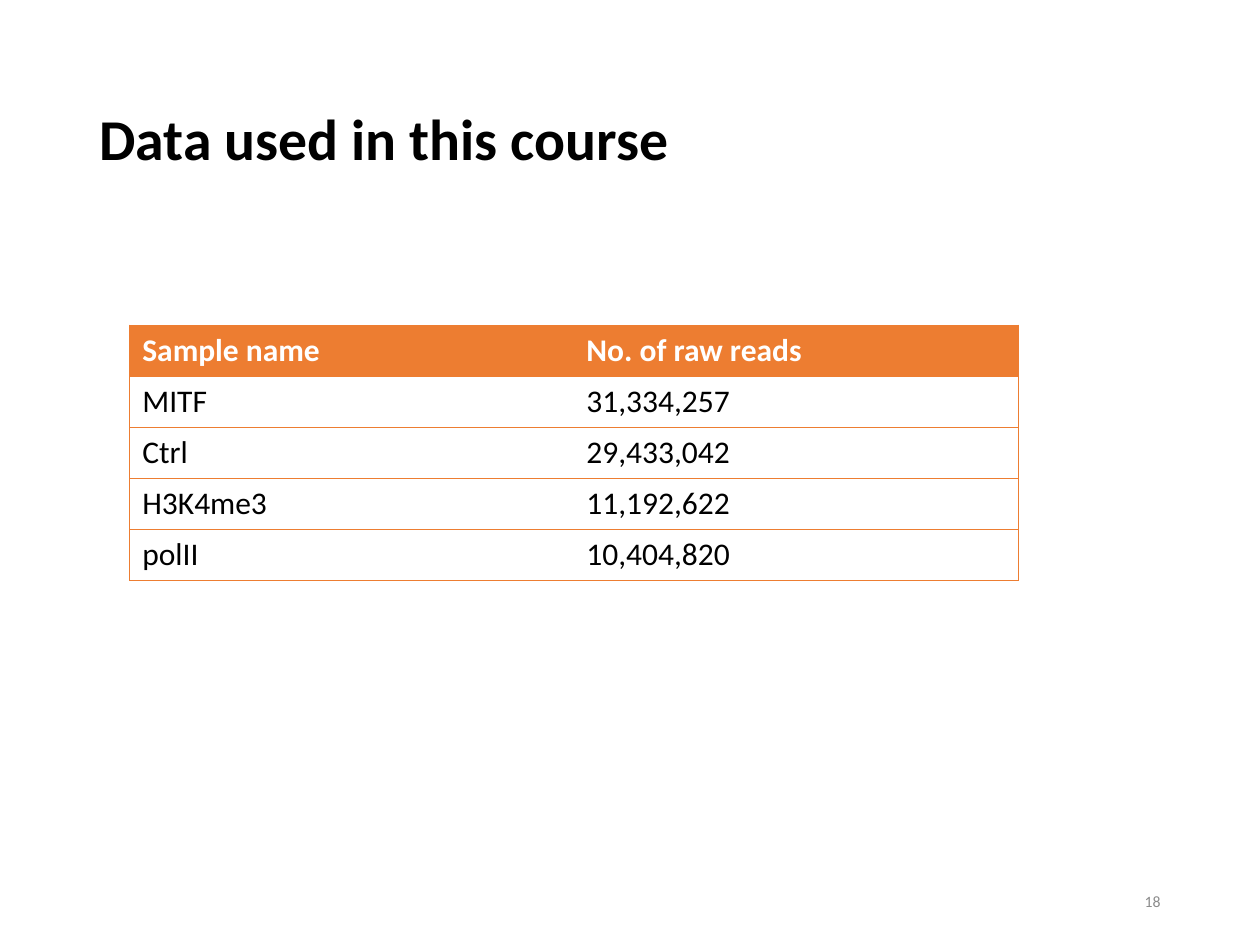
from dataclasses import dataclass

from lxml import etree
from pptx import Presentation
from pptx.dml.color import RGBColor
from pptx.enum.text import MSO_ANCHOR, PP_ALIGN
from pptx.oxml.ns import qn
from pptx.util import Inches, Pt

MIDDLE = MSO_ANCHOR.MIDDLE
LEFT, RIGHT = PP_ALIGN.LEFT, PP_ALIGN.RIGHT


@dataclass(frozen=True)
class Theme:
    font: str = "Calibri"
    ink: str = "000000"
    paper: str = "FFFFFF"
    accent: str = "ED7D31"
    muted: str = "8C8C8C"
    title_size: int = 33
    table_size: int = 18
    number_size: int = 9
    border: float = 0.5


class SlideBuilder:
    """Draws styled elements on the current slide."""

    def __init__(self, page, theme):
        self.page = page
        self.theme = theme

    def style(self, para, size, color, bold=False):
        font = para.font
        font.name, font.size, font.bold = self.theme.font, Pt(size), bold
        font.color.rgb = RGBColor.from_string(color)

    def text(self, words, bounds, size, color, bold=False, align=LEFT, spacing=1.0):
        box = self.page.shapes.add_textbox(*map(Inches, bounds))
        frame = box.text_frame
        frame.word_wrap = True
        frame.vertical_anchor = MIDDLE
        para = frame.paragraphs[0]
        para.text = words
        para.alignment = align
        para.line_spacing = spacing
        self.style(para, size, color, bold)

    def borders(self, cell, visible):
        properties = cell._tc.get_or_add_tcPr()
        for position, side in enumerate("LRTB"):
            line = etree.Element(qn(f"a:ln{side}"), w=str(Pt(self.theme.border)))
            if side in visible:
                fill = etree.SubElement(line, qn("a:solidFill"))
                etree.SubElement(fill, qn("a:srgbClr"), val=self.theme.accent)
            else:
                etree.SubElement(line, qn("a:noFill"))
            properties.insert(position, line)

    def table(self, rows, bounds):
        theme = self.theme
        last = len(rows[0]) - 1
        table = self.page.shapes.add_table(len(rows), last + 1, *map(Inches, bounds)).table
        table.horz_banding = False
        for row, values in enumerate(rows):
            header = row == 0
            for column, value in enumerate(values):
                cell = table.cell(row, column)
                cell.text = value
                cell.fill.solid()
                cell.fill.fore_color.rgb = RGBColor.from_string(theme.accent if header else theme.paper)
                self.style(cell.text_frame.paragraphs[0], theme.table_size,
                           theme.paper if header else theme.ink, header)
                self.borders(cell, "TB" + "L" * (column == 0) + "R" * (column == last))


def main():
    theme = Theme()
    deck = Presentation()
    deck.slide_width, deck.slide_height = Inches(10), Inches(7.5)
    builder = SlideBuilder(deck.slides.add_slide(deck.slide_layouts[6]), theme)

    builder.text("Data used in this course", (0.69, 0.4, 8.62, 1.45),
                 theme.title_size, theme.ink, bold=True, spacing=0.9)
    samples = [
        ("Sample name", "No. of raw reads"),
        ("MITF", "31,334,257"),
        ("Ctrl", "29,433,042"),
        ("H3K4me3", "11,192,622"),
        ("polII", "10,404,820"),
    ]
    builder.table(samples, (1.03, 2.58, 7.05, 2.03))
    builder.text("18", (7.06, 6.95, 2.25, 0.4), theme.number_size, theme.muted, align=RIGHT)
    deck.save("out.pptx")


if __name__ == "__main__":
    main()
